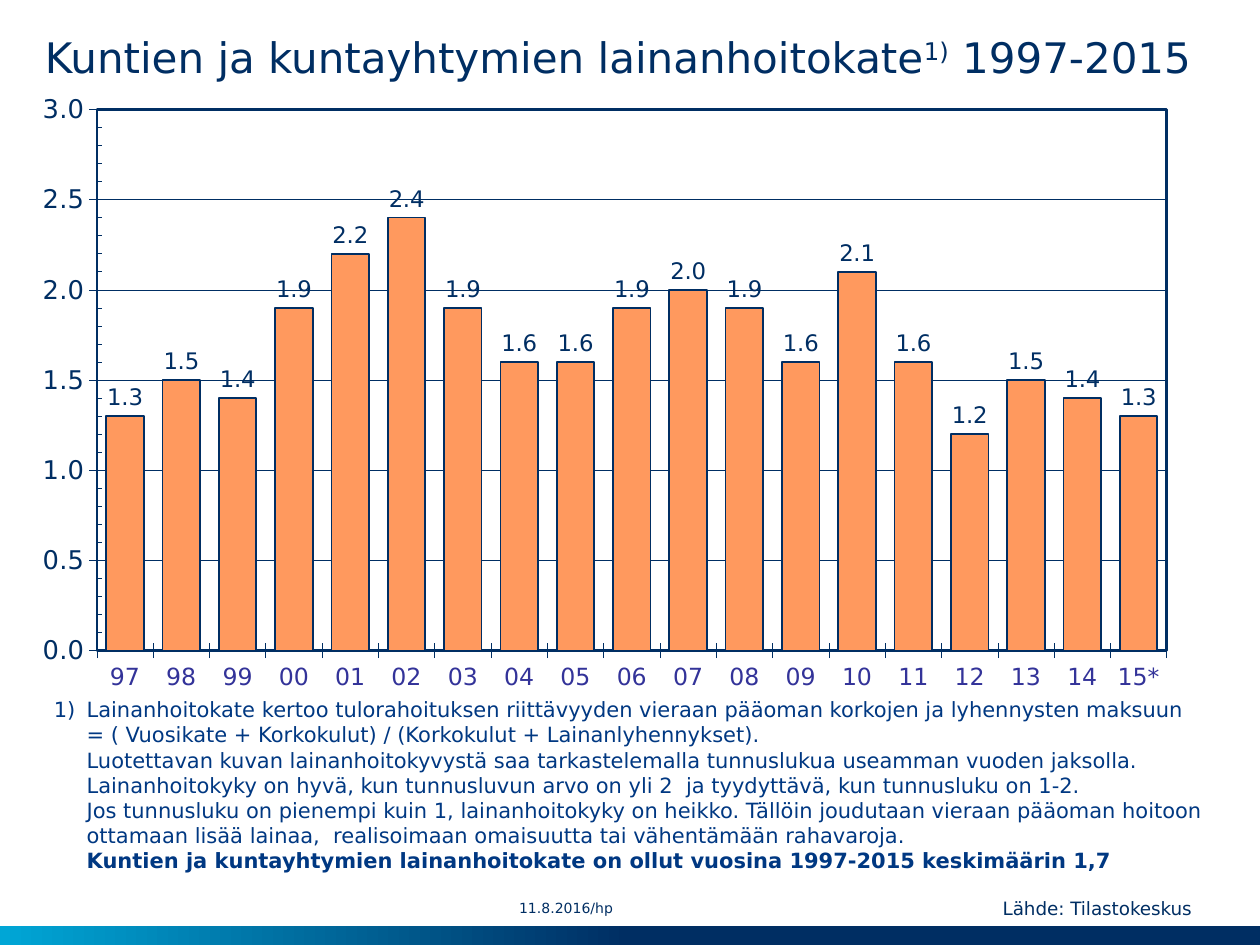
import pptx
import pptx.util
import pptx.chart.data
import pptx.dml.color
import pptx.enum.chart
import pptx.enum.dml
import pptx.enum.shapes
import pptx.enum.text
import pptx.oxml
import pptx.oxml.ns

Inches = pptx.util.Inches
Pt = pptx.util.Pt
Anchor = pptx.enum.text.MSO_ANCHOR
Tick = pptx.enum.chart.XL_TICK_MARK

COLORS = {"navy": "002E63", "sky": "00A6D6", "note": "003882",
          "year": "333399", "bar": "FF995E"}
FONT = "DejaVu Sans"

YEARS = ["97", "98", "99", "00", "01", "02", "03", "04", "05", "06",
         "07", "08", "09", "10", "11", "12", "13", "14", "15*"]
RATIOS = [1.3, 1.5, 1.4, 1.9, 2.2, 2.4, 1.9, 1.6, 1.6, 1.9,
          2.0, 1.9, 1.6, 2.1, 1.6, 1.2, 1.5, 1.4, 1.3]
NOTES = [
    "1)\tLainanhoitokate kertoo tulorahoituksen riittävyyden vieraan pääoman korkojen ja lyhennysten maksuun",
    "= ( Vuosikate + Korkokulut) / (Korkokulut + Lainanlyhennykset).",
    "Luotettavan kuvan lainanhoitokyvystä saa tarkastelemalla tunnuslukua useamman vuoden jaksolla.",
    "Lainanhoitokyky on hyvä, kun tunnusluvun arvo on yli 2  ja tyydyttävä, kun tunnusluku on 1-2.",
    "Jos tunnusluku on pienempi kuin 1, lainanhoitokyky on heikko. Tällöin joudutaan vieraan pääoman hoitoon",
    "ottamaan lisää lainaa,  realisoimaan omaisuutta tai vähentämään rahavaroja.",
    "Kuntien ja kuntayhtymien lainanhoitokate on ollut vuosina 1997-2015 keskimäärin 1,7",
]


def rgb(name):
    return pptx.dml.color.RGBColor.from_string(COLORS[name])


class Page:
    """Style and current slide."""

    def __init__(self, slide):
        self.slide = slide
        self.shapes = slide.shapes

    def style(self, font, size, color="navy", bold=False):
        font.name, font.size, font.bold = FONT, Pt(size), bold
        font.color.rgb = rgb(color)

    def stroke(self, line, width):
        line.color.rgb = rgb("navy")
        line.width = Pt(width)

    def place(self, shape, box):
        shape.left, shape.top, shape.width, shape.height = map(Inches, box)

    def band(self, box):
        bar = self.shapes.add_shape(pptx.enum.shapes.MSO_SHAPE.RECTANGLE, *map(Inches, box))
        bar.shadow.inherit = False
        bar.line.fill.background()
        bar.fill.gradient()
        bar.fill.gradient_angle = 180
        for stop, (pos, name) in zip(bar.fill.gradient_stops, [(0.5, "navy"), (1, "sky")]):
            stop.position = pos
            stop.color.rgb = rgb(name)

    def title(self, box, parts):
        shape = self.shapes.title
        self.place(shape, box)
        frame = shape.text_frame
        frame.auto_size = pptx.enum.text.MSO_AUTO_SIZE.NONE
        frame.vertical_anchor = Anchor.BOTTOM
        frame.margin_left = frame.margin_right = 0
        para = frame.paragraphs[0]
        para.alignment = pptx.enum.text.PP_ALIGN.CENTER
        for text, raised in parts:
            run = para.add_run()
            run.text = text
            if raised:
                run.font._element.set("baseline", "30000")
        self.style(para.font, 24)

    def text(self, box, lines, size, color="navy", anchor=Anchor.TOP, inset=None):
        frame = self.shapes.add_textbox(*map(Inches, box)).text_frame
        frame.word_wrap = True
        frame.vertical_anchor = anchor
        if inset is not None:
            frame.margin_left = frame.margin_right = Inches(inset)
            frame.margin_top = frame.margin_bottom = Inches(inset)
        for i, line in enumerate(lines):
            para = frame.add_paragraph() if i else frame.paragraphs[0]
            para.text = line
            self.style(para.font, size, color)
        return frame.paragraphs

    def axis(self, axis, size, color):
        self.style(axis.tick_labels.font, size, color)
        self.stroke(axis.format.line, 0.3)
        axis.major_tick_mark = Tick.CROSS

    def chart(self, box, years, values):
        data = pptx.chart.data.CategoryChartData()
        data.categories = years
        data.add_series("Lainanhoitokate", values)
        kind = pptx.enum.chart.XL_CHART_TYPE.COLUMN_CLUSTERED
        chart = self.shapes.add_chart(kind, *map(Inches, box), data).chart
        chart.has_legend = chart.has_title = False
        self.style(chart.font, 13)

        # Axes
        self.axis(chart.category_axis, 13.5, "year")
        scale = chart.value_axis
        self.axis(scale, 14.7, "navy")
        scale.minimum_scale, scale.maximum_scale = 0, 3
        scale.major_unit, scale.minor_unit = 0.5, 0.1
        scale.minor_tick_mark = Tick.INSIDE
        scale.tick_labels.number_format = "0.0"
        scale.tick_labels.number_format_is_linked = False
        grid = scale.major_gridlines.format.line
        self.stroke(grid, 0.25)
        grid.dash_style = pptx.enum.dml.MSO_LINE.ROUND_DOT

        # Bars and labels
        plot = chart.plots[0]
        plot.gap_width = 50
        plot.vary_by_categories = False
        bars = plot.series[0]
        bars.format.fill.solid()
        bars.format.fill.fore_color.rgb = rgb("bar")
        self.stroke(bars.format.line, 1)
        labels = bars.data_labels
        labels.show_value = True
        labels.number_format = "#,##0.0"
        labels.number_format_is_linked = False
        labels.position = pptx.enum.chart.XL_LABEL_POSITION.OUTSIDE_END
        self.style(labels.font, 13)
        self.frame(chart, (0.061, 0.036, 0.88, 0.868))

    def frame(self, chart, area):
        """Fix the inner plot area and give it a border."""
        plot = chart._chartSpace.chart.plotArea
        for old in plot.findall(pptx.oxml.ns.qn("c:layout")):
            plot.remove(old)
        spots = "".join(f'<c:{tag} val="{val}"/>' for tag, val in zip("xywh", area))
        space = pptx.oxml.ns.nsdecls("c", "a")
        plot.insert(0, pptx.oxml.parse_xml(
            f'<c:layout {space}><c:manualLayout><c:layoutTarget val="inner"/>'
            f'<c:xMode val="edge"/><c:yMode val="edge"/>{spots}'
            '</c:manualLayout></c:layout>'))
        plot.append(pptx.oxml.parse_xml(
            f'<c:spPr {space}><a:noFill/><a:ln w="19050"><a:solidFill>'
            f'<a:srgbClr val="{COLORS["navy"]}"/></a:solidFill></a:ln></c:spPr>'))


def main():
    deck = pptx.Presentation()
    deck.slide_width, deck.slide_height = Inches(10), Inches(7.5)
    page = Page(deck.slides.add_slide(deck.slide_layouts[5]))

    # Footer band, title and chart
    page.band((0, 7.35, 10, 0.15))
    page.title((0.04, 0.13, 9.73, 0.57),
               [("Kuntien ja kuntayhtymien lainanhoitokate", False),
                ("1)", True), (" 1997-2015", False)])
    page.chart((0.18, 0.69, 9.65, 4.95), YEARS, RATIOS)

    # Source and date
    page.text((7.86, 7.07, 1.97, 0.28), ["Lähde: Tilastokeskus"], 10.5)
    page.text((4.12, 7.06, 1.03, 0.29), ["11.8.2016/hp"], 8,
              anchor=Anchor.MIDDLE, inset=0)

    # Footnote with a hanging number
    notes = page.text((0.28, 5.48, 9.64, 1.51), NOTES, 12, "note")
    for para in notes:
        para._p.get_or_add_pPr().set("marL", str(Inches(0.31)))
    notes[0]._p.pPr.set("indent", str(Inches(-0.26)))
    notes[-1].font.bold = True

    deck.save("out.pptx")


if __name__ == "__main__":
    main()
